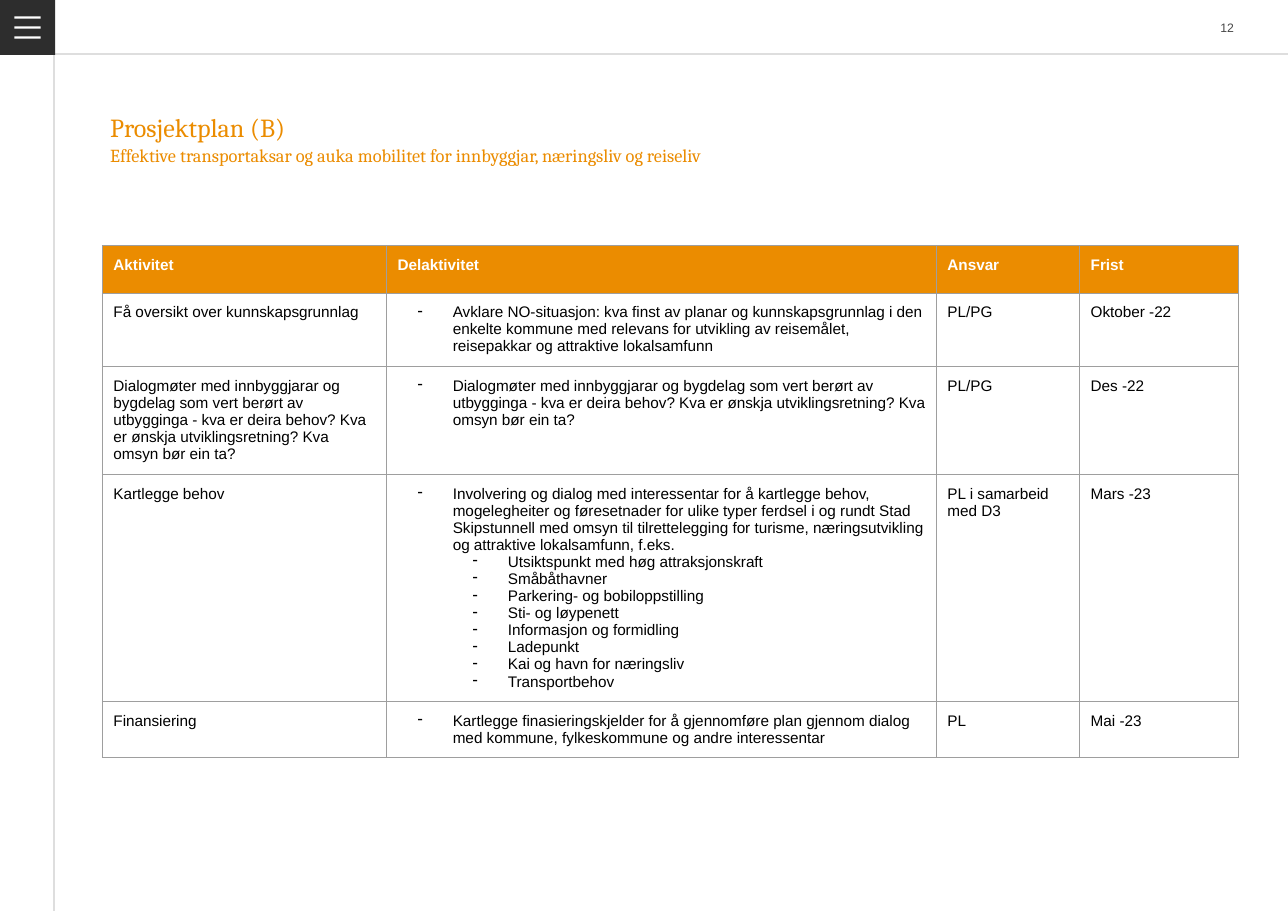
from lxml.etree import SubElement
from pptx import Presentation
from pptx.dml.color import RGBColor
from pptx.enum.shapes import MSO_CONNECTOR, MSO_SHAPE
from pptx.enum.text import MSO_ANCHOR, MSO_AUTO_SIZE, PP_ALIGN
from pptx.oxml.ns import qn
from pptx.util import Inches, Pt

ORANGE = RGBColor(0xEB, 0x8C, 0x00)
WHITE = RGBColor(0xFF, 0xFF, 0xFF)
BLACK = RGBColor(0x00, 0x00, 0x00)
CHARCOAL = RGBColor(0x2D, 0x2D, 0x2D)
NUMBER_GREY = RGBColor(0x46, 0x46, 0x46)
RULE_GREY = RGBColor(0xDE, 0xDE, 0xDE)
BORDER_GREY = RGBColor(0x9E, 0x9E, 0x9E)

WIDTH, HEIGHT = 11.69, 8.27
COLUMN_WIDTHS = [2.58, 4.99, 1.3, 1.44]
ROW_HEIGHTS = [0.43, 0.66, 0.98, 2.06, 0.51]

DIALOGUE = (
    "Dialogmøter med innbyggjarar og bygdelag som vert berørt av utbygginga - "
    "kva er deira behov? Kva er ønskja utviklingsretning? Kva omsyn bør ein ta?"
)
HEADINGS = ["Aktivitet", "Delaktivitet", "Ansvar", "Frist"]
# Each row: activity, sub-activities (the first at the top level), responsible, deadline
ACTIVITIES = [
    ("Få oversikt over kunnskapsgrunnlag",
     ["Avklare NO-situasjon: kva finst av planar og kunnskapsgrunnlag i den enkelte "
      "kommune med relevans for utvikling av reisemålet, reisepakkar og attraktive "
      "lokalsamfunn"],
     "PL/PG", "Oktober -22"),
    (DIALOGUE, [DIALOGUE], "PL/PG", "Des -22"),
    ("Kartlegge behov",
     ["Involvering og dialog med interessentar for å kartlegge behov, mogelegheiter og "
      "føresetnader for ulike typer ferdsel i og rundt Stad Skipstunnell med omsyn til "
      "tilrettelegging for turisme, næringsutvikling og attraktive lokalsamfunn, f.eks.",
      "Utsiktspunkt med høg attraksjonskraft",
      "Småbåthavner",
      "Parkering- og bobiloppstilling",
      "Sti- og løypenett",
      "Informasjon og formidling",
      "Ladepunkt",
      "Kai og havn for næringsliv",
      "Transportbehov"],
     "PL i samarbeid med D3", "Mars -23"),
    ("Finansiering",
     ["Kartlegge finasieringskjelder for å gjennomføre plan gjennom dialog med kommune, "
      "fylkeskommune og andre interessentar"],
     "PL", "Mai -23"),
]


def set_attributes(target, values):
    for name, value in values.items():
        setattr(target, name, value)


def write_paragraph(paragraph, text, size, color, name="Arial", bold=False):
    run = paragraph.add_run()
    run.text = text
    set_attributes(run.font, {"name": name, "size": Pt(size), "bold": bold})
    run.font.color.rgb = color


def format_frame(frame, anchor):
    set_attributes(frame, {
        "word_wrap": True, "auto_size": MSO_AUTO_SIZE.NONE, "vertical_anchor": anchor,
        "margin_left": 0, "margin_right": 0, "margin_top": 0, "margin_bottom": 0,
    })


def fill_plain(shape, color):
    shape.shadow.inherit = False
    shape.fill.solid()
    shape.fill.fore_color.rgb = color
    shape.line.fill.background()


def add_rule(slide, x1, y1, x2, y2):
    rule = slide.shapes.add_connector(
        MSO_CONNECTOR.STRAIGHT, Inches(x1), Inches(y1), Inches(x2), Inches(y2))
    rule.line.color.rgb = RULE_GREY
    rule.line.width = Pt(0.75)
    SubElement(rule._element.spPr, qn("a:effectLst"))


def add_menu_icon(slide):
    square = slide.shapes.add_shape(MSO_SHAPE.RECTANGLE, 0, 0, Inches(0.5), Inches(0.5))
    fill_plain(square, CHARCOAL)
    left, right, thickness = 0.13, 0.37, 0.02
    builder = slide.shapes.build_freeform(Inches(left), Inches(0.15), scale=1.0)
    for index in range(3):
        top = 0.15 + 0.09 * index
        bottom = top + thickness
        if index:
            builder.move_to(Inches(left), Inches(top))
        corners = [(left, bottom), (right, bottom), (right, top)]
        builder.add_line_segments([(Inches(x), Inches(y)) for x, y in corners], close=True)
    fill_plain(builder.convert_to_shape(), WHITE)


def add_page_number(slide, number):
    box = slide.shapes.add_textbox(Inches(10.7), 0, Inches(0.5), Inches(0.5))
    format_frame(box.text_frame, MSO_ANCHOR.MIDDLE)
    paragraph = box.text_frame.paragraphs[0]
    paragraph.alignment = PP_ALIGN.RIGHT
    write_paragraph(paragraph, number, 8, NUMBER_GREY)


def format_title(title, lines):
    set_attributes(title, {"left": Inches(1), "top": Inches(1),
                           "width": Inches(10.2), "height": Inches(0.58)})
    frame = title.text_frame
    format_frame(frame, MSO_ANCHOR.TOP)
    for index, (text, size) in enumerate(lines):
        paragraph = frame.add_paragraph() if index else frame.paragraphs[0]
        set_attributes(paragraph, {"alignment": PP_ALIGN.LEFT, "line_spacing": 1.05,
                                   "space_before": Pt(0)})
        write_paragraph(paragraph, text, size, ORANGE, "Cambria")


def set_borders(cell):
    properties = cell._tc.get_or_add_tcPr()
    for side in ("lnL", "lnR", "lnT", "lnB"):
        line = SubElement(properties, qn(f"a:{side}"), w=str(Pt(0.75)))
        fill = SubElement(line, qn("a:solidFill"))
        SubElement(fill, qn("a:srgbClr"), val=str(BORDER_GREY))


def set_dash_bullet(paragraph, level):
    paragraph.level = level
    properties = paragraph._p.get_or_add_pPr()
    properties.set("marL", str(Inches(0.5 * (level + 1))))
    properties.set("indent", str(Inches(-0.32)))
    color = SubElement(properties, qn("a:buClr"))
    SubElement(color, qn("a:srgbClr"), val=str(BLACK))
    SubElement(properties, qn("a:buChar"), char="-")


def fill_cell(cell, content, is_heading):
    """Write a string as plain text, or a list as dash bullets."""
    margin = Inches(0.1)
    set_attributes(cell, {"margin_left": margin, "margin_right": margin,
                          "margin_top": margin, "margin_bottom": margin})
    set_borders(cell)
    if is_heading:
        cell.fill.solid()
        cell.fill.fore_color.rgb = ORANGE
    else:
        cell.fill.background()
    bulleted = isinstance(content, list)
    frame = cell.text_frame
    for index, text in enumerate(content if bulleted else [content]):
        paragraph = frame.add_paragraph() if index else frame.paragraphs[0]
        if bulleted:
            set_dash_bullet(paragraph, min(index, 1))
        write_paragraph(paragraph, text, 10, WHITE if is_heading else BLACK, bold=is_heading)


def add_plan_table(slide):
    rows = [HEADINGS, *ACTIVITIES]
    table = slide.shapes.add_table(
        len(rows), len(HEADINGS), Inches(0.93), Inches(2.23),
        Inches(sum(COLUMN_WIDTHS)), Inches(sum(ROW_HEIGHTS))).table
    set_attributes(table, {"first_row": False, "horz_banding": False})
    for column, width in zip(table.columns, COLUMN_WIDTHS):
        column.width = Inches(width)
    for row_index, (row, height) in enumerate(zip(table.rows, ROW_HEIGHTS)):
        row.height = Inches(height)
        for cell, content in zip(row.cells, rows[row_index]):
            fill_cell(cell, content, row_index == 0)


def main():
    presentation = Presentation()
    set_attributes(presentation, {"slide_width": Inches(WIDTH), "slide_height": Inches(HEIGHT)})
    slide = presentation.slides.add_slide(presentation.slide_layouts[5])
    add_rule(slide, 0, 0.49, WIDTH, 0.49)
    add_rule(slide, 0.49, 0, 0.49, HEIGHT)
    add_menu_icon(slide)
    add_page_number(slide, "12")
    format_title(slide.shapes.title, [
        ("Prosjektplan (B)", 17),
        ("Effektive transportaksar og auka mobilitet for innbyggjar, "
         "næringsliv og reiseliv", 12),
    ])
    add_plan_table(slide)
    presentation.save("out.pptx")


if __name__ == "__main__":
    main()
